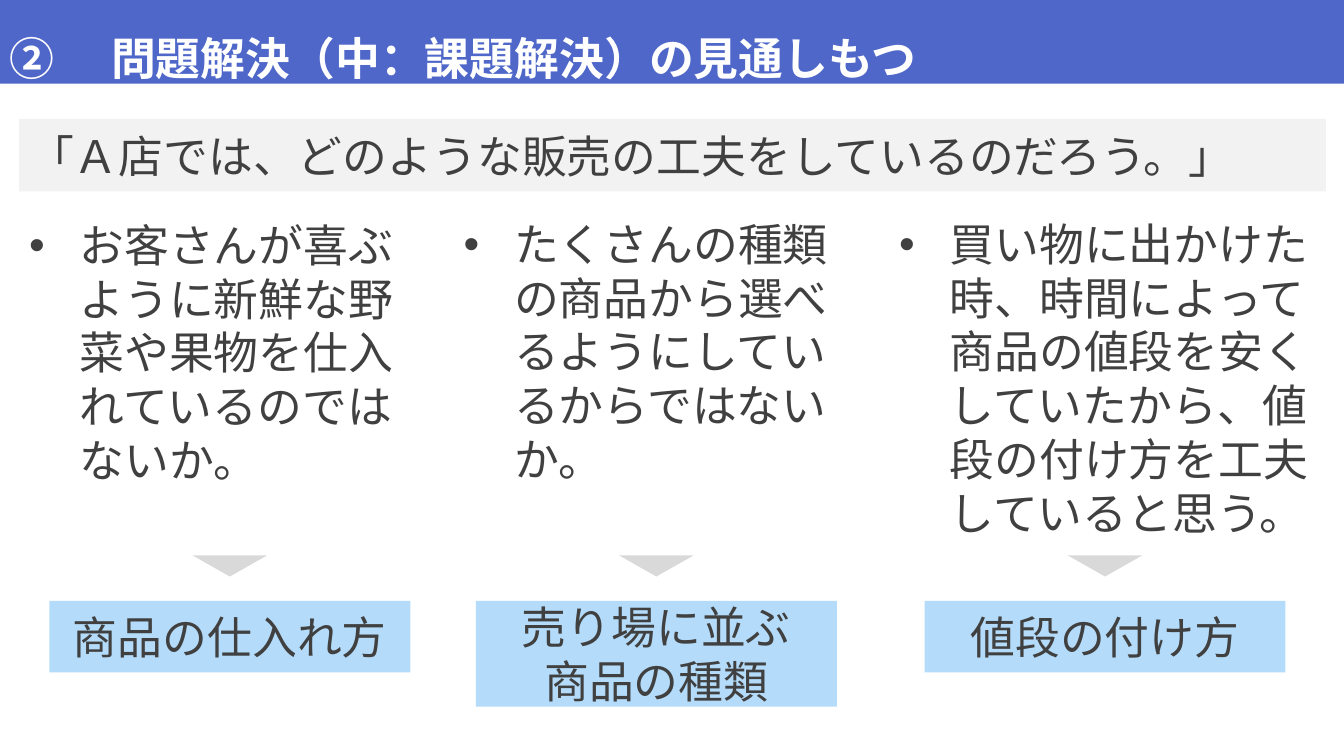
from lxml import etree
from pptx import Presentation, util as u
from pptx.dml.color import RGBColor
from pptx.enum import shapes, text
from pptx.oxml.ns import qn

# Content
TITLE = "\u3000問題解決（中：課題解決）の見通しもつ".replace("\u3000", "　")
QUESTION = "「Ａ店では、どのような販売の工夫をしているのだろう。」"
# idea, its (left, top, width, height), theme lines, theme left, theme height
COLUMNS = [
    ("お客さんが喜ぶように新鮮な野菜や果物を仕入れているのではないか。",
     (0.19, 2.11, 4.19, 2.84), ["商品の仕入れ方"], 0.49, 0.71),
    ("たくさんの種類の商品から選べるようにしているからではないか。",
     (4.5, 2.1, 4.19, 2.85), ["売り場に並ぶ", "商品の種類"], 4.72, 1.05),
    ("買い物に出かけた時、時間によって商品の値段を安くしていたから、値段の付け方を工夫していると思う。",
     (8.82, 2.1, 4.33, 3.18), ["値段の付け方"], 9.17, 0.71),
]

# Format
COLORS = {"title": "4E67C8", "white": "FFFFFF", "ink": "404040",
          "question": "F2F2F2", "theme": "B4DCFA", "arrow": "D9D9D9"}
FONT = {"name": "Noto Sans CJK JP", "size": u.Pt(32)}
W, H = 13.33, 7.5
THEME_TOP, THEME_W = 5.96, 3.58
ARROW_TOP, ARROW_W, ARROW_H = 5.51, 0.74, 0.21

prs = Presentation()
prs.slide_width, prs.slide_height = u.Inches(W), u.Inches(H)
s = prs.slides.add_slide(prs.slide_layouts[6])


def add_box(box, fill=None, kind=shapes.MSO_SHAPE.RECTANGLE):
    box = [u.Inches(v) for v in box]
    if fill is None:
        return s.shapes.add_textbox(*box)
    sp = s.shapes.add_shape(kind, *box)
    sp.shadow.inherit = False
    sp.fill.solid()
    sp.fill.fore_color.rgb = RGBColor.from_string(COLORS[fill])
    sp.line.fill.background()
    return sp


def write(sp, lines, color="ink", bold=False, anchor="TOP", align="LEFT"):
    tf = sp.text_frame
    tf.word_wrap = True
    tf.vertical_anchor = getattr(text.MSO_ANCHOR, anchor)
    for i, line in enumerate(lines):
        p = tf.paragraphs[0] if i == 0 else tf.add_paragraph()
        p.alignment = getattr(text.PP_ALIGN, align)
        r = p.add_run()
        r.text = line
        for key, value in {**FONT, "bold": bold}.items():
            setattr(r.font, key, value)
        r.font.color.rgb = RGBColor.from_string(COLORS[color])
        etree.SubElement(r.font._element, qn("a:ea")).set("typeface", FONT["name"])
    return tf.paragraphs[0]


def add_bullet(p, indent, tag, **attrs):
    pPr = p._p.get_or_add_pPr()
    pPr.set("marL", str(u.Inches(indent)))
    pPr.set("indent", str(-u.Inches(indent)))
    if tag == "a:buChar":
        etree.SubElement(pPr, qn("a:buFont")).set("typeface", "Arial")
    bullet = etree.SubElement(pPr, qn(tag))
    for key, value in attrs.items():
        bullet.set(key, value)


# Title band
p = write(add_box((0, -0.01, W, 0.84), "title"), [TITLE], "white", bold=True)
p.line_spacing = 1.5
add_bullet(p, 0.56, "a:buAutoNum", type="circleNumDbPlain", startAt="2")

# Question band
write(add_box((0.19, 1.18, 12.96, 0.72), "question"), [QUESTION], anchor="MIDDLE")

# Idea, arrow and theme of each column
for idea, idea_box, theme, left, height in COLUMNS:
    add_bullet(write(add_box(idea_box), [idea]), 0.5, "a:buChar", char="•")
    arrow_left = left + (THEME_W - ARROW_W) / 2
    arrow = add_box((arrow_left, ARROW_TOP, ARROW_W, ARROW_H), "arrow",
                    shapes.MSO_SHAPE.ISOSCELES_TRIANGLE)
    arrow._element.spPr.get_or_add_xfrm().set("flipV", "1")
    write(add_box((left, THEME_TOP, THEME_W, height), "theme"), theme,
          anchor="MIDDLE", align="CENTER")

prs.save("out.pptx")
